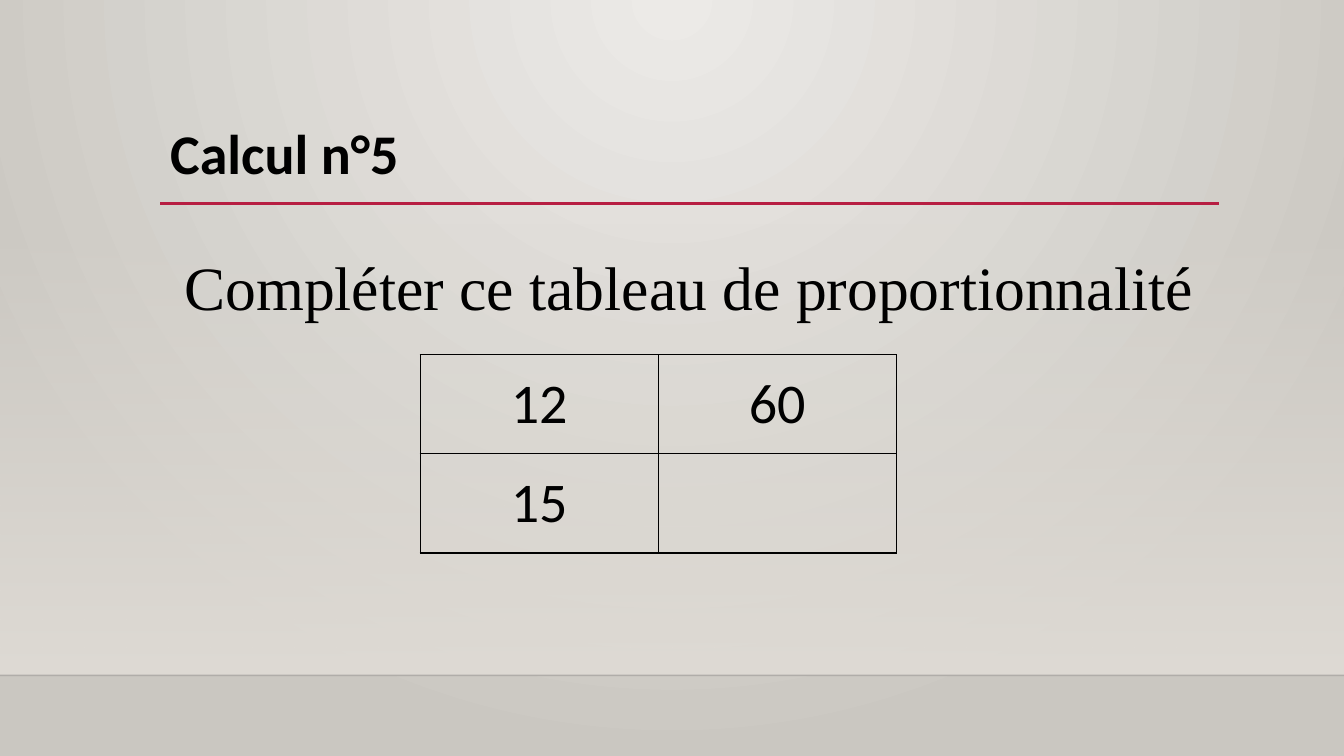
from dataclasses import dataclass

from lxml.etree import SubElement
from pptx import Presentation
from pptx.dml.color import RGBColor
from pptx.enum.shapes import MSO_CONNECTOR, MSO_SHAPE
from pptx.enum.text import MSO_ANCHOR, PP_ALIGN
from pptx.oxml import parse_xml
from pptx.oxml.ns import nsdecls, qn
from pptx.util import Pt


@dataclass(frozen=True)
class Theme:
    """Colours, fonts and type sizes of the slide."""
    ink: str = "000000"
    accent: str = "B71E42"
    edge: str = "000001"
    glow: str = "ECEAE7"
    shade: str = "CAC7C1"
    wall: str = "DFDBD5"
    sans: str = "Calibri"
    serif: str = "Times New Roman"
    text_size: int = 40
    question_size: int = 44


THEME = Theme()


def gradient(stops, direction):
    """Return a gradient fill from (position, colour, opacity) stops, in percent."""
    stop_xml = "".join(
        f'<a:gs pos="{position * 1000}"><a:srgbClr val="{colour}">'
        f'<a:alpha val="{opacity * 1000}"/></a:srgbClr></a:gs>'
        for position, colour, opacity in stops)
    return parse_xml(f'<a:gradFill {nsdecls("a")} rotWithShape="1">'
                     f'<a:gsLst>{stop_xml}</a:gsLst>{direction}</a:gradFill>')


def replace_fill(fill, owner, new_fill):
    """Put a gradient in the place of the owner's fill."""
    fill.solid()
    old_fill = owner.find(".//" + qn("a:solidFill"))
    old_fill.getparent().replace(old_fill, new_fill)


def paint_background(slide):
    """Paint a round glow that starts at the top centre."""
    direction = ('<a:path path="circle"><a:fillToRect l="43000" t="0" '
                 'r="43000" b="100000"/></a:path>')
    stops = [(0, THEME.glow, 100), (100, THEME.shade, 100)]
    replace_fill(slide.background.fill, slide.element, gradient(stops, direction))


def add_wall(slide, top, width, height):
    """Add the band that fades in towards the floor."""
    wall = slide.shapes.add_shape(MSO_SHAPE.RECTANGLE, 0, Pt(top), Pt(width), Pt(height))
    wall.shadow.inherit = False
    wall.line.fill.background()
    stops = [(0, THEME.wall, 0), (100, THEME.wall, 100)]
    replace_fill(wall.fill, wall.element.spPr,
                 gradient(stops, '<a:lin ang="5400000" scaled="0"/>'))


def add_rule(slide, left, right, y, colour, width, opacity=100):
    """Add a horizontal line."""
    rule = slide.shapes.add_connector(MSO_CONNECTOR.STRAIGHT, Pt(left), Pt(y), Pt(right), Pt(y))
    rule.line.width = Pt(width)
    rule.line.color.rgb = RGBColor.from_string(colour)
    properties = rule.element.spPr
    if opacity < 100:
        colour_element = properties.find(".//" + qn("a:srgbClr"))
        SubElement(colour_element, qn("a:alpha"), val=str(opacity * 1000))
    SubElement(properties, qn("a:effectLst"))


def style_paragraph(paragraph, size, font_name, alignment, bold=False):
    """Set the alignment and font of a paragraph."""
    paragraph.alignment = alignment
    font = paragraph.font
    font.size, font.name, font.bold = Pt(size), font_name, bold
    font.color.rgb = RGBColor.from_string(THEME.ink)


def add_text(slide, text, left, top, width, height, size, font_name,
             alignment=PP_ALIGN.LEFT, bold=False, inset=3.6, spacing=1.0):
    """Add a text box with one paragraph."""
    frame = slide.shapes.add_textbox(Pt(left), Pt(top), Pt(width), Pt(height)).text_frame
    frame.word_wrap = True
    frame.margin_top = Pt(inset)
    paragraph = frame.paragraphs[0]
    paragraph.text = text
    paragraph.line_spacing = spacing
    style_paragraph(paragraph, size, font_name, alignment, bold)


def add_borders(cell):
    """Draw a thin line on each side of a cell."""
    properties = cell._tc.get_or_add_tcPr()
    for index, side in enumerate(("lnL", "lnR", "lnT", "lnB")):
        properties.insert(index, parse_xml(
            f'<a:{side} {nsdecls("a")} w="{Pt(1)}"><a:solidFill>'
            f'<a:srgbClr val="{THEME.ink}"/></a:solidFill></a:{side}>'))


def add_number_table(slide, rows, left, top, column_width, row_height):
    """Add a bordered table of centred numbers."""
    column_count = len(rows[0])
    table = slide.shapes.add_table(
        len(rows), column_count, Pt(left), Pt(top),
        Pt(column_width * column_count), Pt(row_height * len(rows))).table
    table.first_row = table.horz_banding = False
    for row_index, values in enumerate(rows):
        for column_index, value in enumerate(values):
            cell = table.cell(row_index, column_index)
            cell.text = value
            cell.vertical_anchor = MSO_ANCHOR.MIDDLE
            cell.fill.background()
            add_borders(cell)
            style_paragraph(cell.text_frame.paragraphs[0], THEME.text_size,
                            THEME.sans, PP_ALIGN.CENTER)


def main():
    """Build and save the slide."""
    presentation = Presentation()
    presentation.slide_width, presentation.slide_height = Pt(960), Pt(540)
    slide = presentation.slides.add_slide(presentation.slide_layouts[6])
    paint_background(slide)
    add_wall(slide, 159, 960, 323.4)
    add_rule(slide, 0, 960, 482.4, THEME.edge, 1, opacity=20)
    add_rule(slide, 114.5, 871, 145.4, THEME.accent, 2.5)
    add_text(slide, "Calcul n°5", 114.5, 81.4, 206, 55.4,
             THEME.text_size, THEME.sans, bold=True)
    add_text(slide, "Compléter ce tableau de proportionnalité", 114.5, 158.4, 756, 271.4,
             THEME.question_size, THEME.serif, PP_ALIGN.CENTER, inset=8.6, spacing=1.2)
    add_number_table(slide, [("12", "60"), ("15", "")], 300.2, 253.4, 170, 70.8)
    presentation.save("out.pptx")


if __name__ == "__main__":
    main()
